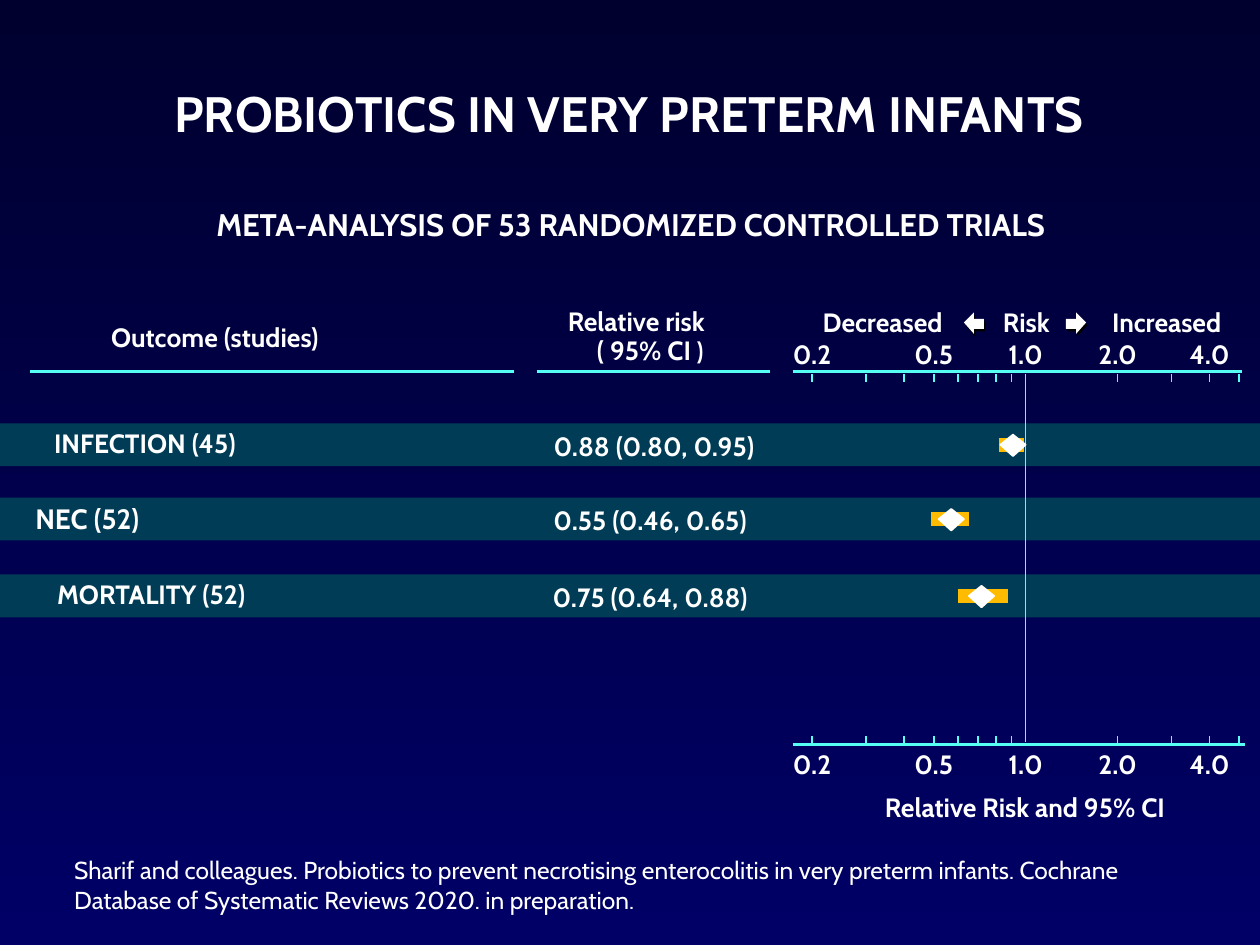
import math

import pptx
import pptx.dml.color
import pptx.enum.shapes
import pptx.enum.text
import pptx.oxml.ns
import pptx.util
from pptx.util import Inches

THEME = {
    "font": "Cabin",
    "top": "00002F", "bottom": "000066", "band": "003C55",
    "axis": "55FFF4", "interval": "FFBB00", "text": "FFFFFF", "shade": "000000",
    "title": 28.4, "subtitle": 17.8, "outcome": 16, "body": 15.1, "small": 14.2, "source": 14,
    "rule": 1.88, "thin": 1, "bar": 7.88,
}

# text, left, top, width, height, size
HEADINGS = [
    ("PROBIOTICS IN VERY PRETERM INFANTS", 0.81, 0.66, 8.37, 0.48, "title"),
    ("META-ANALYSIS OF 53 RANDOMIZED CONTROLLED TRIALS", 1.25, 1.63, 7.51, 0.3, "subtitle"),
    ("Outcome (studies)", 0.72, 2.55, 1.97, 0.25, "body"),
    ("Relative risk", 4.39, 2.42, 1.32, 0.25, "body"),
    ("Decreased", 6.45, 2.43, 1.11, 0.26, "body"),
    ("Risk", 7.92, 2.43, 0.45, 0.26, "body"),
    ("Increased", 8.73, 2.43, 1.06, 0.26, "body"),
    ("Relative Risk and 95% CI", 6.77, 6.28, 2.73, 0.25, "body"),
]
# band top, outcome, outcome box (left, width), risk, risk width, interval, estimate
ROWS = [
    (3.36, "INFECTION (45)", (0.28, 1.74), "0.88 (0.80, 0.95)", 1.86, (7.93, 8.13), 8.04),
    (3.95, "NEC (52)", (0.28, 4.12), "0.55 (0.46, 0.65)", 1.8, (7.39, 7.69), 7.55),
    (4.56, "MORTALITY (52)", (0.3, 1.8), "0.75 (0.64, 0.88)", 1.8, (7.6, 8), 7.79),
]
LEFT_ALIGNED = "NEC (52)"
TICKS = [0.2, 0.3, 0.4, 0.5, 0.6, 0.7, 0.8, 0.9, 2, 3, 4, 5]
LABELS = ["0.2", "0.5", "1.0", "2.0", "4.0"]
RULES = [(0.24, 4.08, 2.95), (4.26, 6.11, 2.95), (6.29, 9.86, 2.95), (6.29, 9.88, 5.91)]
SCALES = [(2.97, 2.68), (5.84, 5.94)]  # tick top, label top
ARROWS = [(7.65, 1), (8.62, -1)]  # tip, direction from tip to tail
SOURCE = ("Sharif and colleagues. Probiotics to prevent necrotising enterocolitis in very preterm "
          "infants. Cochrane Database of Systematic Reviews 2020. in preparation.")
NO_EFFECT, DOUBLING = 8.14, 0.73


def axis_position(risk):
    """Horizontal place of a relative risk on the logarithmic axis, in inches."""
    return NO_EFFECT + DOUBLING * math.log2(risk)


def color(name):
    return pptx.dml.color.RGBColor.from_string(THEME[name])


def add_text(slide, runs, left, top, width, height, size="body", bold=True,
             centered=True, wrap=False, padded=False):
    """Add a text box; runs is a string or a list of (text, size name) pairs."""
    shape = slide.shapes.add_textbox(Inches(left), Inches(top), Inches(width), Inches(height))
    frame = shape.text_frame
    frame.word_wrap = wrap
    frame.auto_size = pptx.enum.text.MSO_AUTO_SIZE.SHAPE_TO_FIT_TEXT
    if not padded:
        frame.margin_left = frame.margin_right = frame.margin_top = frame.margin_bottom = 0
    paragraph = frame.paragraphs[0]
    alignment = pptx.enum.text.PP_ALIGN
    paragraph.alignment = alignment.CENTER if centered else alignment.LEFT
    for text, size_name in [(runs, size)] if isinstance(runs, str) else runs:
        run = paragraph.add_run()
        run.text = text
        run.font.name = THEME["font"]
        run.font.size = pptx.util.Pt(THEME[size_name])
        run.font.bold = bold
        run.font.color.rgb = color("text")


def add_line(slide, start, end, line_color="axis", weight="thin"):
    points = [Inches(value) for value in (*start, *end)]
    line = slide.shapes.add_connector(pptx.enum.shapes.MSO_CONNECTOR.STRAIGHT, *points)
    line.line.color.rgb = color(line_color)
    line.line.width = pptx.util.Pt(THEME[weight])
    properties = line._element.spPr
    properties.append(properties.makeelement(pptx.oxml.ns.qn("a:effectLst"), {}))


def paint(shape, fill, outlined=False):
    shape.shadow.inherit = False
    shape.fill.solid()
    shape.fill.fore_color.rgb = color(fill)
    if outlined:
        shape.line.color.rgb = color(fill)
        shape.line.width = pptx.util.Pt(THEME["thin"])
    else:
        shape.line.fill.background()


def add_rectangle(shapes, left, top, width, height, fill):
    shape = shapes.add_shape(pptx.enum.shapes.MSO_SHAPE.RECTANGLE, Inches(left), Inches(top),
                             Inches(width), Inches(height))
    paint(shape, fill)


def add_polygon(shapes, points, fill, outlined=False):
    first, *others = [(Inches(x), Inches(y)) for x, y in points]
    builder = shapes.build_freeform(*first)
    builder.add_line_segments(others, close=True)
    paint(builder.convert_to_shape(), fill, outlined)


def add_arrow(slide, tip, direction):
    """Add a white block arrow over its dark offset shade."""
    group = slide.shapes.add_group_shape()
    for fill, shift, top in (("shade", 0.01, 2.5), ("text", 0, 2.48)):
        x = tip + shift
        base = x + 0.08 * direction
        add_polygon(group.shapes, [(base, top), (base, top + 0.17), (x, top + 0.08)], fill)
        shaft = min(x + 0.05 * direction, x + 0.16 * direction)
        add_rectangle(group.shapes, shaft, top + 0.05, 0.11, 0.08, fill)


def add_scale(slide, tick_top, label_top):
    for risk in TICKS:
        x = axis_position(risk)
        add_line(slide, (x, tick_top), (x, tick_top + 0.06))
    for label in LABELS:
        add_text(slide, label, axis_position(float(label)) - 0.17, label_top, 0.34, 0.26)


def add_row(slide, top, outcome, outcome_box, risk, risk_width, interval, estimate):
    left, width = outcome_box
    centered = outcome != LEFT_ALIGNED
    add_text(slide, outcome, left, top + 0.03, width, 0.25, centered=centered,
             wrap=not centered, size="body" if centered else "outcome")
    add_text(slide, risk, 4.26, top + 0.05, risk_width, 0.25)
    middle = top + 0.17
    add_line(slide, (interval[0], middle), (interval[1], middle), "interval", "bar")
    diamond = [(estimate - 0.1, middle), (estimate, middle - 0.08),
               (estimate + 0.1, middle), (estimate, middle + 0.09)]
    add_polygon(slide.shapes, diamond, "text", outlined=True)


def main():
    presentation = pptx.Presentation()
    presentation.slide_width, presentation.slide_height = Inches(10), Inches(7.5)
    slide = presentation.slides.add_slide(presentation.slide_layouts[6])
    background = slide.background.fill
    background.gradient()
    background.gradient_angle = 270
    for stop, name in zip(background.gradient_stops, ("top", "bottom")):
        stop.color.rgb = color(name)

    for row in ROWS:
        add_rectangle(slide.shapes, 0, row[0], 10, 0.34, "band")
    for start, end, y in RULES:
        add_line(slide, (start, y), (end, y), weight="rule")
    for heading in HEADINGS:
        add_text(slide, *heading)
    add_text(slide, [("( 95% CI", "body"), (" )", "small")], 4.59, 2.65, 1.14, 0.26)
    for scale in SCALES:
        add_scale(slide, *scale)
    for arrow in ARROWS:
        add_arrow(slide, *arrow)
    add_line(slide, (NO_EFFECT, 2.97), (NO_EFFECT, 5.89))
    for row in ROWS:
        add_row(slide, *row)
    add_text(slide, SOURCE, 0.49, 6.74, 9.04, 0.57, size="source", bold=False,
             centered=False, wrap=True, padded=True)
    presentation.save("out.pptx")


if __name__ == "__main__":
    main()
